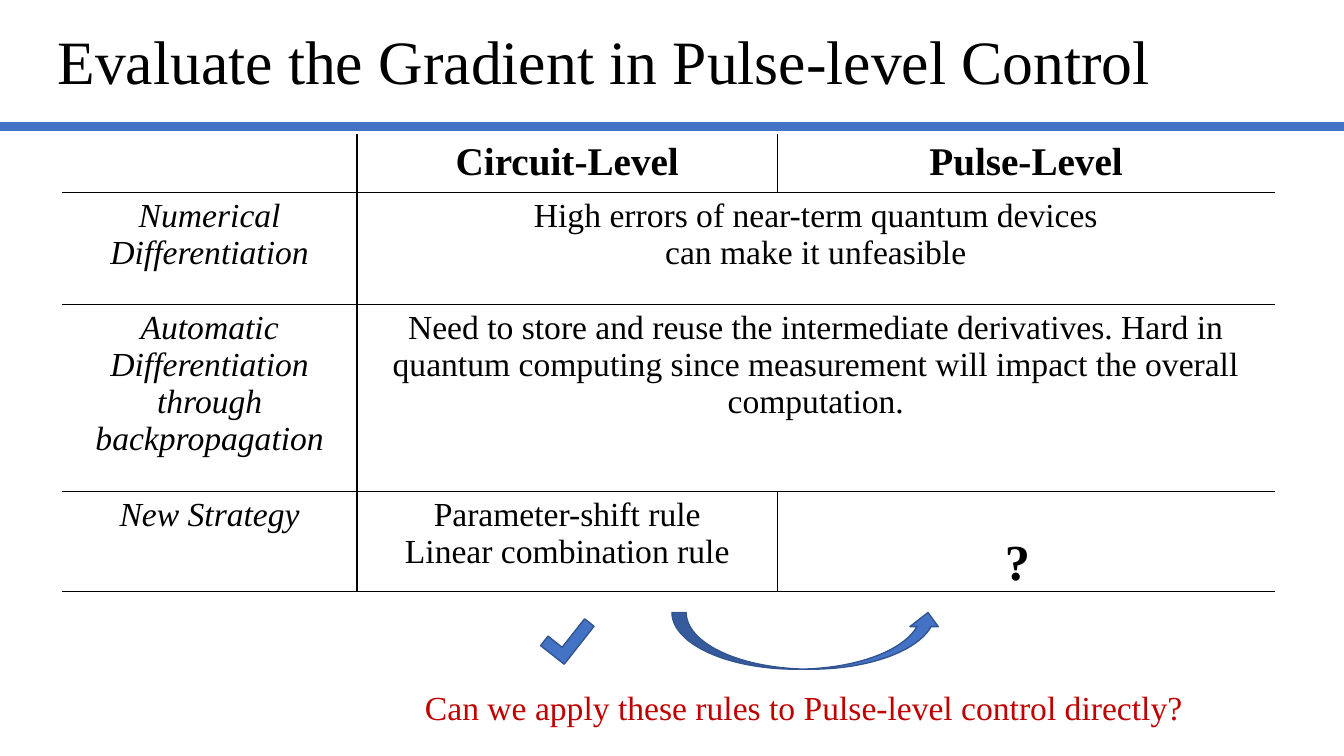
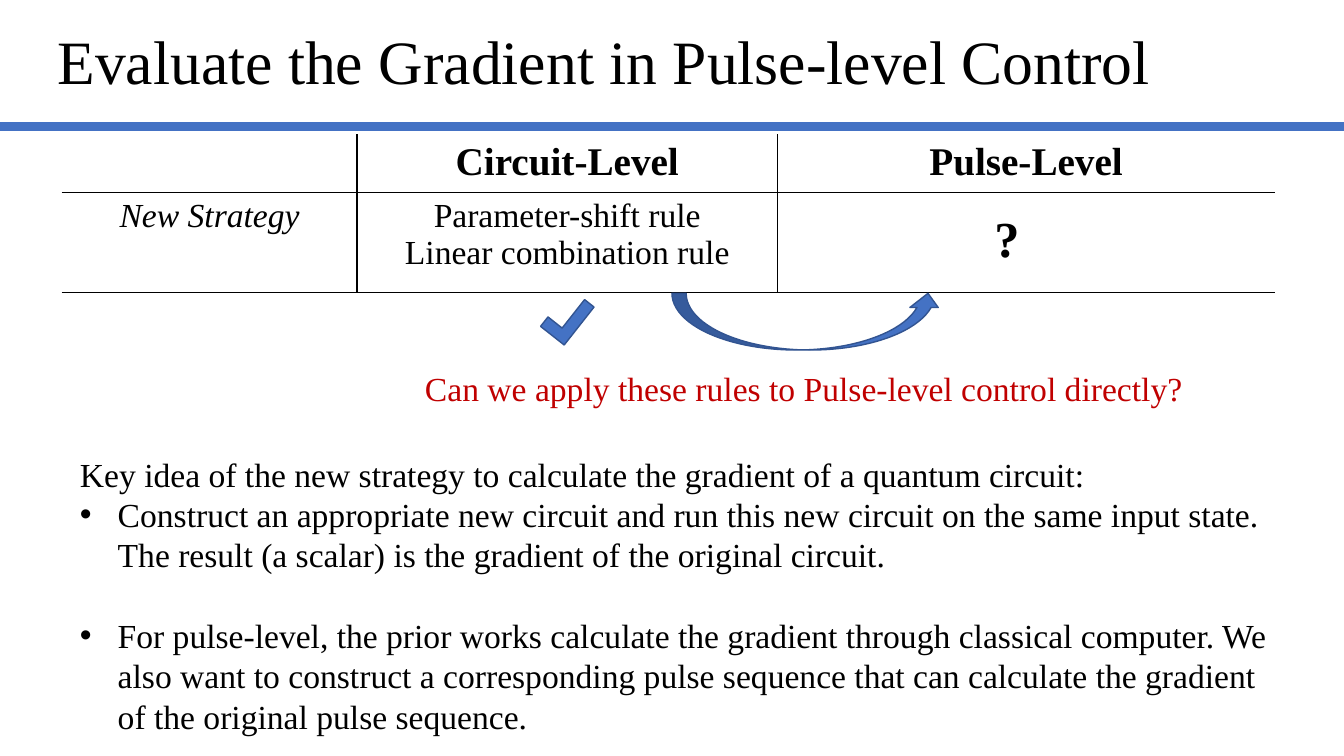
from lxml.etree import SubElement
from pptx import Presentation
from pptx.dml.color import RGBColor
from pptx.enum.shapes import MSO_CONNECTOR, MSO_SHAPE
from pptx.enum.text import MSO_ANCHOR, PP_ALIGN
from pptx.oxml.ns import qn
from pptx.util import Pt

FONT = "Times New Roman"
BLACK, WHITE, BLUE, DARK_BLUE, RED = "000000", "FFFFFF", "4472C4", "325491", "C00000"
TITLE = "Evaluate the Gradient in Pulse-level Control"
QUESTION = "Can we apply these rules to Pulse-level control directly?"
COLUMN_WIDTHS = [210.5, 300.5, 355]
BULLET_INDENT = 27

# Each row: height and cell texts; a row with two texts spans its last two columns
HEADER = (39, ["", "Circuit-Level", "Pulse-Level"])
NUMERICAL = (80, ["Numerical\nDifferentiation",
                  "High errors of near-term quantum devices\ncan make it unfeasible"])
AUTOMATIC = (133.5, ["Automatic\nDifferentiation through backpropagation",
                     "Need to store and reuse the intermediate derivatives. Hard in quantum "
                     "computing since measurement will impact the overall computation."])
STRATEGY = (71.5, ["New Strategy", "Parameter-shift rule\nLinear combination rule", ""])

# Each slide: table rows, top of the arrow, left and top of the question mark
SLIDES = [
    ([HEADER, NUMERICAL, AUTOMATIC, STRATEGY], 437.5, 697.5, 375),
    ([HEADER, STRATEGY], 209.5, 690, 144.5),
]

KEY_IDEA = [
    "Key idea of the new strategy to calculate the gradient of a quantum circuit:",
    "Construct an appropriate new circuit and run this new circuit on the same input state. "
    "The result (a scalar) is the gradient of the original circuit.",
    "For pulse-level, the prior works calculate the gradient through classical computer. We also "
    "want to construct a corresponding pulse sequence that can calculate the gradient of the "
    "original pulse sequence.",
]


def style(paragraph, size, color=BLACK, bold=False, italic=False):
    font = paragraph.font
    font.name, font.size, font.bold, font.italic = FONT, Pt(size), bold, italic
    font.color.rgb = RGBColor.from_string(color)


def add_text(slide, box, text, size, color=BLACK, bold=False):
    frame = slide.shapes.add_textbox(*map(Pt, box)).text_frame
    frame.word_wrap = True
    frame.text = text
    for paragraph in frame.paragraphs:
        paragraph.line_spacing = Pt(1.2 * size)
        style(paragraph, size, color, bold)
    return frame


presentation = Presentation()
presentation.slide_width, presentation.slide_height = Pt(960), Pt(540)

for rows, arrow_top, mark_left, mark_top in SLIDES:
    slide = presentation.slides.add_slide(presentation.slide_layouts[6])

    # Title and blue rule
    rule = slide.shapes.add_connector(MSO_CONNECTOR.STRAIGHT, 0, Pt(90.5), Pt(960), Pt(90.5))
    rule.line.color.rgb = RGBColor.from_string(BLUE)
    rule.line.width = Pt(6)
    SubElement(rule._element.spPr, qn("a:effectLst"))
    title = add_text(slide, (34, 11, 828, 70.5), TITLE, 44)
    title.vertical_anchor = MSO_ANCHOR.MIDDLE
    title.paragraphs[0].line_spacing = 0.9

    # Table with inner lines and a closing line at the bottom
    table = slide.shapes.add_table(len(rows), 3, Pt(44.5), Pt(96.5), Pt(sum(COLUMN_WIDTHS)),
                                   Pt(sum(height for height, texts in rows))).table
    table.first_row = table.horz_banding = False
    for column, width in zip(table.columns, COLUMN_WIDTHS):
        column.width = Pt(width)
    for row, (height, texts) in enumerate(rows):
        table.rows[row].height = Pt(height)
        spans = len(texts) == 2
        if spans:
            table.cell(row, 1).merge(table.cell(row, 2))
        for column in range(3):
            cell = table.cell(row, column)
            borders = {
                "a:lnL": column == 1 or (column == 2 and not spans),
                "a:lnR": column == 0 or (column == 1 and not spans),
                "a:lnT": row > 0,
                "a:lnB": True,
            }
            for side, visible in borders.items():
                line = SubElement(cell._tc.get_or_add_tcPr(), qn(side), w=str(Pt(1)))
                fill = SubElement(line, qn("a:solidFill"))
                SubElement(fill, qn("a:srgbClr"), val=BLACK if visible else WHITE)
            cell.fill.solid()
            cell.fill.fore_color.rgb = RGBColor.from_string(WHITE)
            if column < len(texts):
                cell.text = texts[column]
                for paragraph in cell.text_frame.paragraphs:
                    paragraph.alignment = PP_ALIGN.CENTER
                    style(paragraph, 24 if row else 28, bold=row == 0,
                          italic=row > 0 and column == 0)

    # Check mark and curved arrow
    check = slide.shapes.add_shape(MSO_SHAPE.CORNER, Pt(388), Pt(arrow_top + 6), Pt(34.5), Pt(21.5))
    check.rotation = 308.2
    check.adjustments[0] = check.adjustments[1] = 0.4
    arrow = slide.shapes.add_shape(MSO_SHAPE.CURVED_UP_ARROW, Pt(480), Pt(arrow_top), Pt(193), Pt(40.5))
    for shape in (check, arrow):
        shape.shadow.inherit = False
        shape.fill.solid()
        shape.fill.fore_color.rgb = RGBColor.from_string(BLUE)
        shape.line.color.rgb = RGBColor.from_string(DARK_BLUE)
        shape.line.width = Pt(1)

    # Question
    add_text(slide, (296.5, arrow_top + 49.75, 603.5, 36), QUESTION, 24, RED)
    mark = add_text(slide, (mark_left, mark_top, 58.5, 51), "?", 36, bold=True)
    mark.paragraphs[0].alignment = PP_ALIGN.CENTER

# Key idea, on the last slide
key_idea = add_text(slide, (50, 320.5, 872, 211), "\n".join(KEY_IDEA), 24)
for paragraph in key_idea.paragraphs[1:]:
    properties = paragraph._p.get_or_add_pPr()
    properties.set("marL", str(Pt(BULLET_INDENT)))
    properties.set("indent", str(-Pt(BULLET_INDENT)))
    bullet_font = properties.makeelement(qn("a:buFont"), {"typeface": "Arial"})
    bullet = properties.makeelement(qn("a:buChar"), {"char": "•"})
    properties.find(qn("a:defRPr")).addprevious(bullet_font)
    bullet_font.addnext(bullet)
key_idea.paragraphs[2].space_before = Pt(28.8)

presentation.save("out.pptx")
